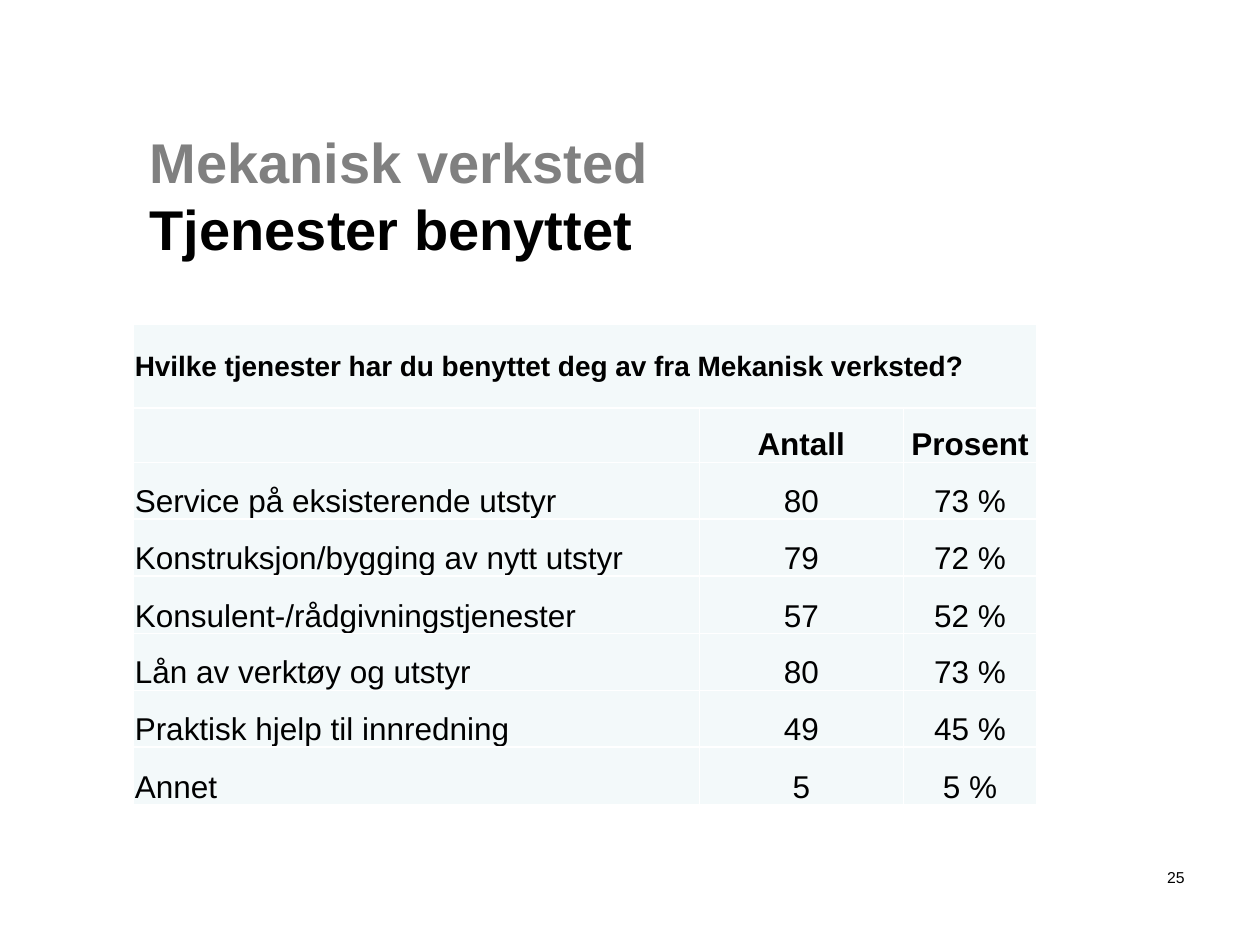
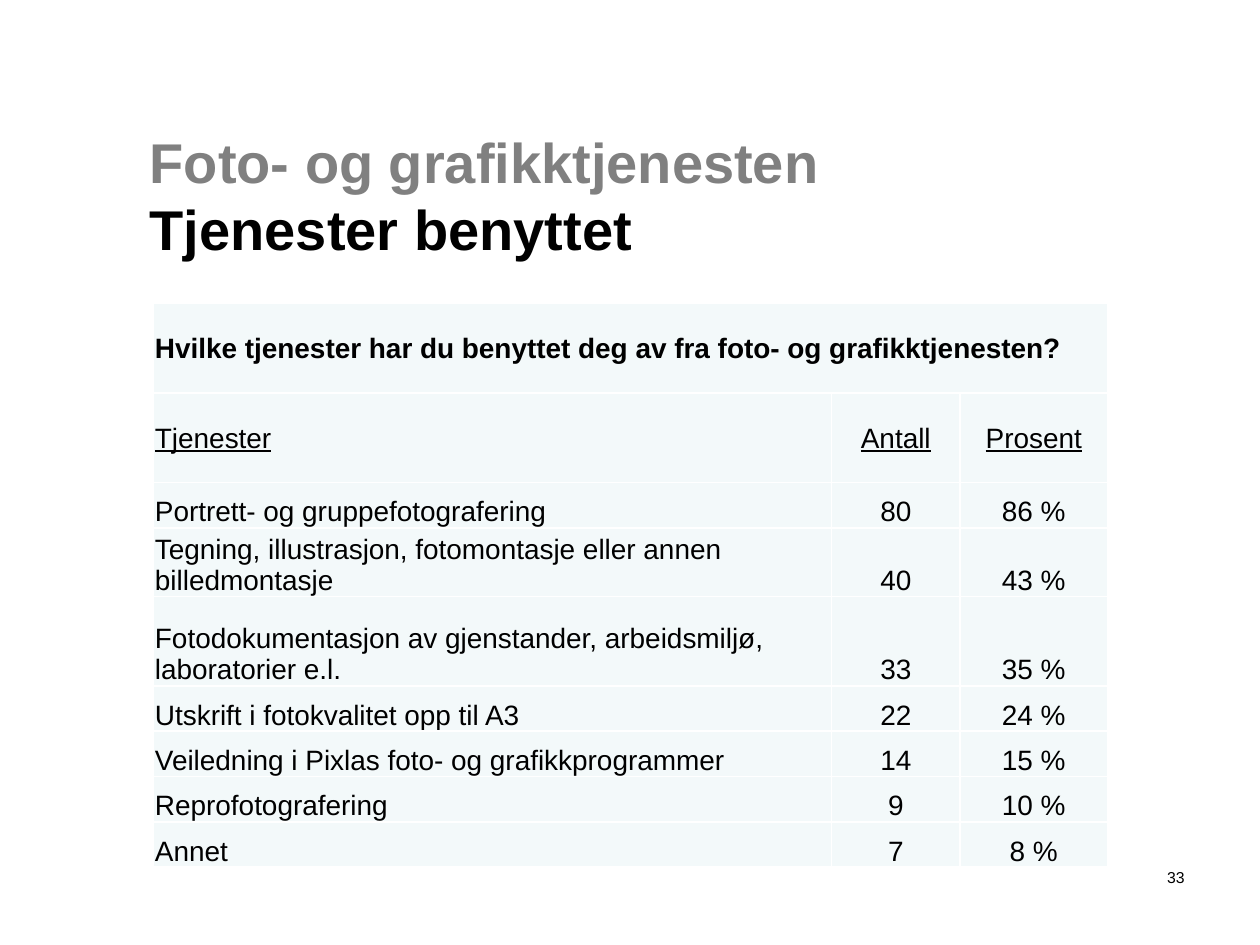
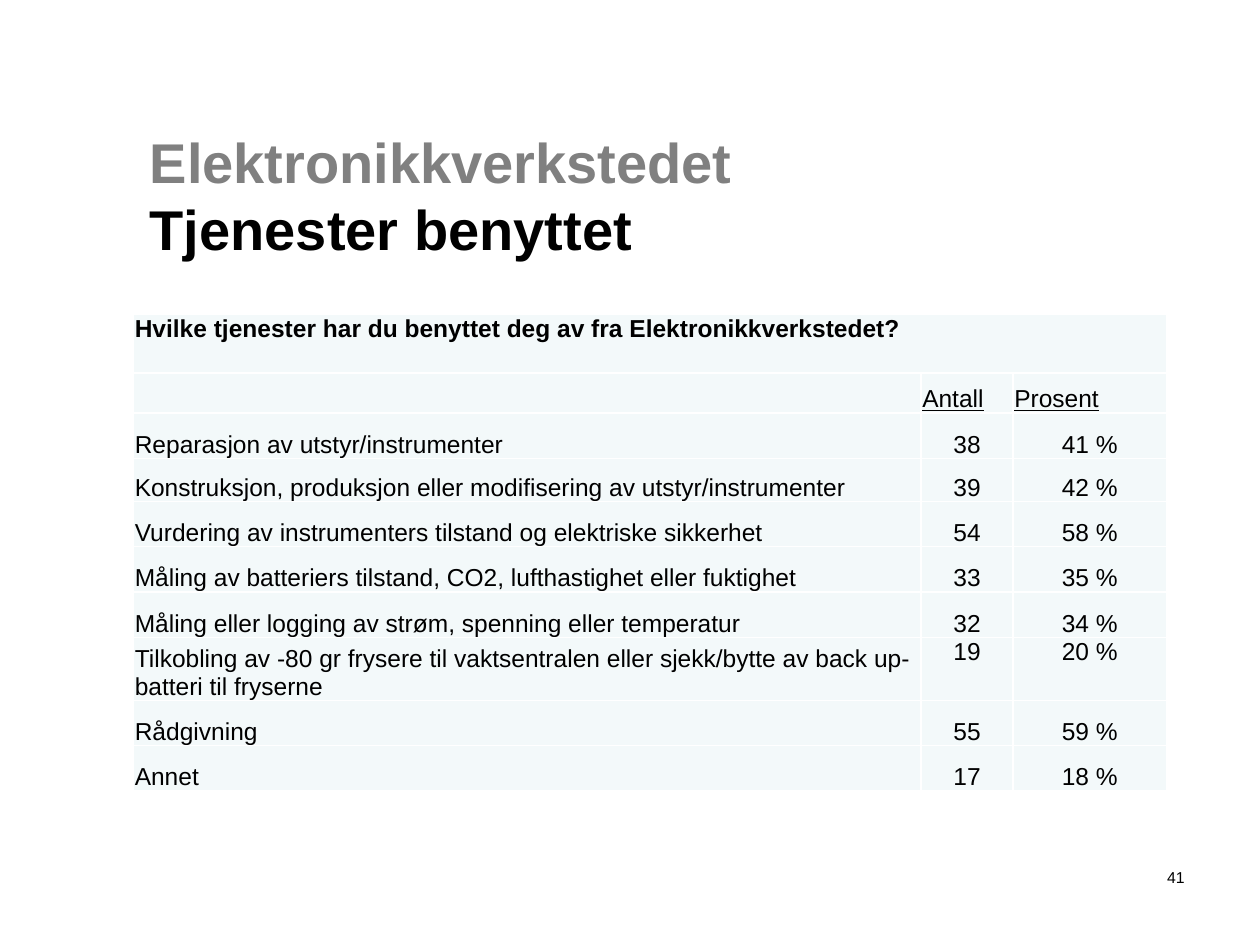
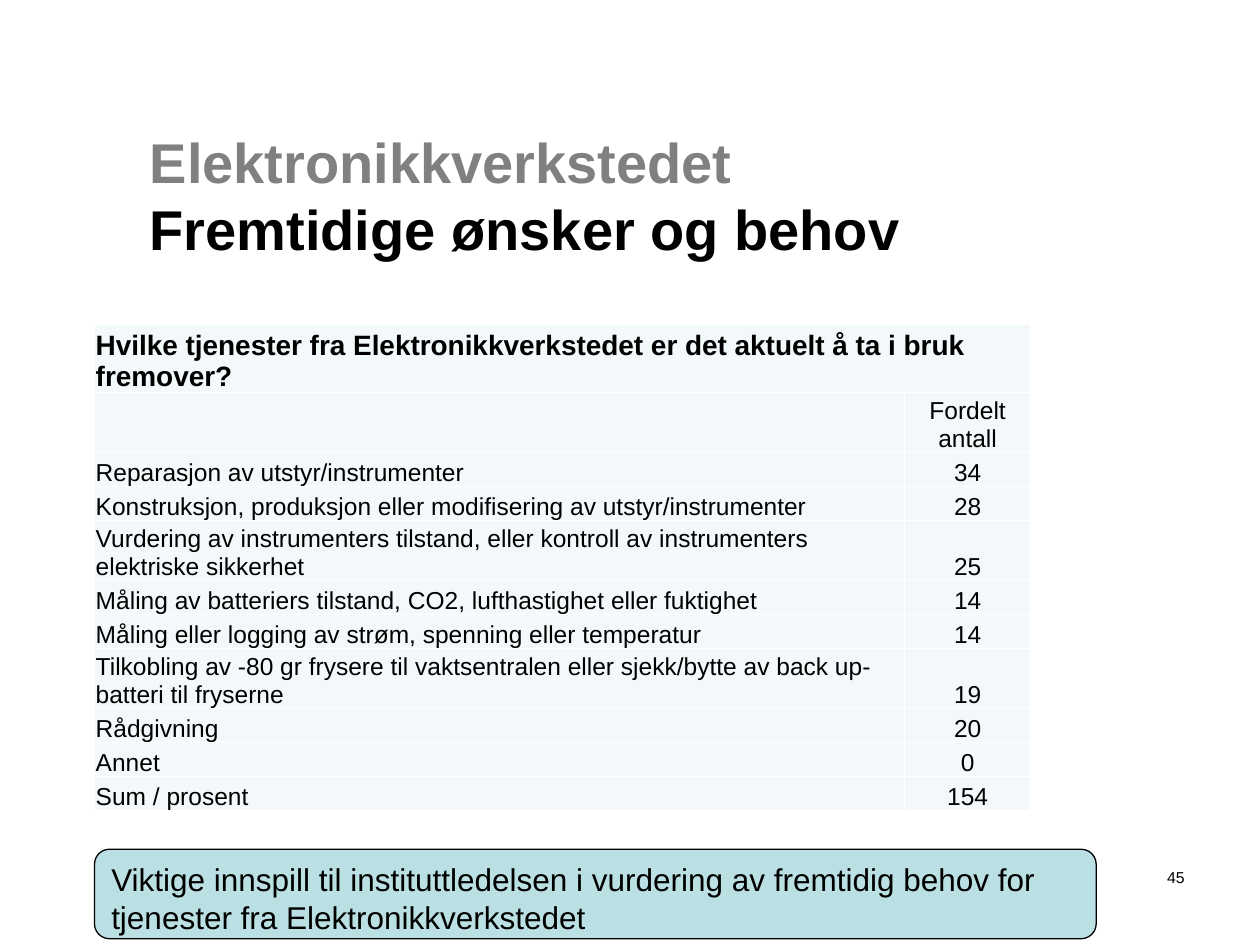
"""Builds four survey slides on the workshops and their services."""
from dataclasses import dataclass, replace
from typing import Any

from lxml import etree
from pptx import Presentation
from pptx.dml.color import RGBColor
from pptx.enum.shapes import MSO_SHAPE
from pptx.enum.text import MSO_ANCHOR, PP_ALIGN
from pptx.oxml.ns import qn
from pptx.util import Inches, Pt

LEFT, CENTER, RIGHT = PP_ALIGN.LEFT, PP_ALIGN.CENTER, PP_ALIGN.RIGHT
TOP, MIDDLE, BOTTOM = MSO_ANCHOR.TOP, MSO_ANCHOR.MIDDLE, MSO_ANCHOR.BOTTOM
ROUNDED = MSO_SHAPE.ROUNDED_RECTANGLE
BLANK_LAYOUT = 6


@dataclass(frozen=True)
class Theme:
    """Colours, font and type sizes of the deck."""
    font: str = "Arial"
    text: str = "000000"
    muted: str = "808080"
    cell: str = "F3F9FA"
    border: str = "FFFFFF"
    callout: str = "BBE0E3"
    title_size: int = 32
    callout_size: int = 18
    number_size: int = 9


THEME = Theme()


@dataclass(frozen=True)
class Box:
    """Place and size in inches."""
    left: float
    top: float
    width: float
    height: float


@dataclass(frozen=True)
class CellStyle:
    """Type and placement of the text in a cell."""
    size: int
    align: Any = CENTER
    anchor: Any = BOTTOM
    bold: bool = False
    underline: bool = False


@dataclass(frozen=True)
class SurveyTable:
    """Question, column headings and answers of a table."""
    left: float
    top: float
    columns: tuple[float, ...]
    heights: tuple[float, ...]
    question: str
    question_style: CellStyle
    headings: tuple[str, ...]
    heading_style: CellStyle
    answers: tuple[tuple[str, ...], ...]
    size: int
    top_values: str = ""


@dataclass(frozen=True)
class SurveySlide:
    """Content of one slide."""
    unit: str
    topic: str
    number: int
    table: SurveyTable
    callout: str = ""


TITLE_BOX = Box(1.09, 0.92, 8.42, 1.25)
NUMBER_BOX = Box(8.75, 6.84, 0.75, 0.5)
CALLOUT_BOX = Box(0.75, 6.74, 7.95, 0.71)
USED = "Tjenester benyttet"
REPAIR = "Reparasjon av utstyr/instrumenter"
BUILD = "Konstruksjon, produksjon eller modifisering av utstyr/instrumenter"
BATTERIES = "Måling av batteriers tilstand, CO2, lufthastighet eller fuktighet"
LOGGING = "Måling eller logging av strøm, spenning eller temperatur"
FREEZERS = ("Tilkobling av -80 gr frysere til vaktsentralen eller "
            "sjekk/bytte av back up-batteri til fryserne")

SLIDES = (
    SurveySlide("Mekanisk verksted", USED, 25, SurveyTable(
        1.06, 2.57, (4.49, 1.62, 1.06), (0.67, 0.43) + (0.45, 0.45, 0.46) * 2,
        "Hvilke tjenester har du benyttet deg av fra Mekanisk verksted?",
        CellStyle(16, LEFT, MIDDLE, bold=True),
        ("", "Antall", "Prosent"), CellStyle(18, bold=True),
        (("Service på eksisterende utstyr", "80", "73 %"),
         ("Konstruksjon/bygging av nytt utstyr", "79", "72 %"),
         ("Konsulent-/rådgivningstjenester", "57", "52 %"),
         ("Lån av verktøy og utstyr", "80", "73 %"),
         ("Praktisk hjelp til innredning", "49", "45 %"),
         ("Annet", "5", "5 %")), 18)),
    SurveySlide("Foto- og grafikktjenesten", USED, 33, SurveyTable(
        1.22, 2.41, (5.38, 1.02, 1.17),
        (0.71, 0.71, 0.36, 0.36, 0.71) + (0.36,) * 4,
        "Hvilke tjenester har du benyttet deg av fra foto- og grafikktjenesten?",
        CellStyle(16, LEFT, MIDDLE, bold=True),
        ("Tjenester", "Antall", "Prosent"), CellStyle(16, CENTER, MIDDLE, underline=True),
        (("Portrett- og gruppefotografering", "80", "86 %"),
         ("Tegning, illustrasjon, fotomontasje eller annen billedmontasje", "40", "43 %"),
         ("Fotodokumentasjon av gjenstander, arbeidsmiljø, laboratorier e.l.", "33", "35 %"),
         ("Utskrift i fotokvalitet opp til A3", "22", "24 %"),
         ("Veiledning i Pixlas foto- og grafikkprogrammer", "14", "15 %"),
         ("Reprofotografering", "9", "10 %"),
         ("Annet", "7", "8 %")), 16)),
    SurveySlide("Elektronikkverkstedet", USED, 41, SurveyTable(
        1.06, 2.49, (6.25, 0.73, 1.22),
        (0.47, 0.32, 0.36, 0.34, 0.36, 0.36, 0.36, 0.5, 0.36, 0.36),
        "Hvilke tjenester har du benyttet deg av fra Elektronikkverkstedet?",
        CellStyle(14, LEFT, TOP, bold=True),
        ("", "Antall", "Prosent"), CellStyle(14, LEFT, underline=True),
        ((REPAIR, "38", "41 %"),
         (BUILD, "39", "42 %"),
         ("Vurdering av instrumenters tilstand og elektriske sikkerhet", "54", "58 %"),
         (BATTERIES, "33", "35 %"),
         (LOGGING, "32", "34 %"),
         (FREEZERS, "19", "20 %"),
         ("Rådgivning", "55", "59 %"),
         ("Annet", "17", "18 %")), 14, top_values=FREEZERS)),
    SurveySlide("Elektronikkverkstedet", "Fremtidige ønsker og behov", 45, SurveyTable(
        0.75, 2.57, (6.43, 1), (0.27,) * 11,
        "Hvilke tjenester fra Elektronikkverkstedet er det aktuelt å ta i bruk fremover?",
        CellStyle(16, LEFT, bold=True),
        ("", "Fordelt antall"), CellStyle(14),
        ((REPAIR, "34"),
         (BUILD, "28"),
         ("Vurdering av instrumenters tilstand, eller kontroll av instrumenters "
          "elektriske sikkerhet", "25"),
         (BATTERIES, "14"),
         (LOGGING, "14"),
         (FREEZERS, "19"),
         ("Rådgivning", "20"),
         ("Annet", "0"),
         ("Sum / prosent", "154")), 14),
        "Viktige innspill til instituttledelsen i vurdering av fremtidig behov for "
        "tjenester fra Elektronikkverkstedet"),
)


def set_attributes(target: Any, values: dict[str, Any]) -> None:
    """Set every named attribute on the target."""
    for name, value in values.items():
        setattr(target, name, value)


def place(box: Box) -> tuple[int, ...]:
    """Return the box as slide lengths."""
    return tuple(Inches(length) for length in (box.left, box.top, box.width, box.height))


def add_run(paragraph: Any, text: str, size: int, color: str = THEME.text, **extra: Any) -> None:
    """Add a run in the deck font."""
    run = paragraph.add_run()
    run.text = text
    set_attributes(run.font, {"name": THEME.font, "size": Pt(size), **extra})
    run.font.color.rgb = RGBColor.from_string(color)


def add_text_box(slide: Any, box: Box, anchor: Any, align: Any) -> Any:
    """Add a wrapping text box and return its first paragraph."""
    frame = slide.shapes.add_textbox(*place(box)).text_frame
    set_attributes(frame, {"word_wrap": True, "vertical_anchor": anchor})
    paragraph = frame.paragraphs[0]
    paragraph.alignment = align
    return paragraph


def add_title(slide: Any, unit: str, topic: str) -> None:
    """Add the two-line title."""
    paragraph = add_text_box(slide, TITLE_BOX, MIDDLE, LEFT)
    add_run(paragraph, unit, THEME.title_size, THEME.muted, bold=True)
    paragraph.add_line_break()
    add_run(paragraph, topic, THEME.title_size, bold=True)


def add_number(slide: Any, number: int) -> None:
    """Add the slide number."""
    paragraph = add_text_box(slide, NUMBER_BOX, TOP, RIGHT)
    add_run(paragraph, str(number), THEME.number_size)


def add_callout(slide: Any, text: str) -> None:
    """Add the rounded conclusion box."""
    shape = slide.shapes.add_shape(ROUNDED, *place(CALLOUT_BOX))
    shape.shadow.inherit = False
    shape.fill.solid()
    shape.fill.fore_color.rgb = RGBColor.from_string(THEME.callout)
    shape.line.color.rgb = RGBColor.from_string(THEME.text)
    shape.line.width = Pt(0.75)
    set_attributes(shape.text_frame, {"word_wrap": True, "vertical_anchor": TOP})
    paragraph = shape.text_frame.paragraphs[0]
    paragraph.alignment = LEFT
    add_run(paragraph, text, THEME.callout_size)


def add_borders(cell: Any) -> None:
    """Draw a thin line on all four sides of a cell."""
    properties = cell._tc.get_or_add_tcPr()
    for side in ("a:lnL", "a:lnR", "a:lnT", "a:lnB"):
        line = etree.SubElement(properties, qn(side), w=str(Pt(1)))
        fill = etree.SubElement(line, qn("a:solidFill"))
        etree.SubElement(fill, qn("a:srgbClr"), val=THEME.border)


def fill_cell(cell: Any, text: str, style: CellStyle) -> None:
    """Format a cell and write its text."""
    add_borders(cell)
    cell.fill.solid()
    cell.fill.fore_color.rgb = RGBColor.from_string(THEME.cell)
    margin = Inches(0.01)
    set_attributes(cell, {"margin_left": margin, "margin_right": margin, "margin_top": margin,
                          "margin_bottom": 0, "vertical_anchor": style.anchor})
    if text:
        paragraph = cell.text_frame.paragraphs[0]
        paragraph.alignment = style.align
        add_run(paragraph, text, style.size, bold=style.bold, underline=style.underline)


def pick_style(survey: SurveyTable, row: int, column: int, label: str) -> CellStyle:
    """Choose the style for a cell by its place in the table."""
    if row == 0:
        return survey.question_style
    base = survey.heading_style if row == 1 else CellStyle(survey.size)
    if column == 0:
        return replace(base, align=LEFT)
    if label and label == survey.top_values:
        return replace(base, anchor=TOP)
    return base


def add_survey_table(slide: Any, survey: SurveyTable) -> None:
    """Add the table with question, headings and answers."""
    question_row = (survey.question,) + ("",) * (len(survey.columns) - 1)
    rows = (question_row, survey.headings) + survey.answers
    box = Box(survey.left, survey.top, sum(survey.columns), sum(survey.heights))
    table = slide.shapes.add_table(len(rows), len(survey.columns), *place(box)).table
    set_attributes(table, {"first_row": False, "horz_banding": False})
    for column, width in zip(table.columns, survey.columns):
        column.width = Inches(width)
    for row, height in zip(table.rows, survey.heights):
        row.height = Inches(height)
    for row_index, texts in enumerate(rows):
        for column_index, text in enumerate(texts):
            style = pick_style(survey, row_index, column_index, texts[0])
            fill_cell(table.cell(row_index, column_index), text, style)
    table.cell(0, 0).merge(table.cell(0, len(survey.columns) - 1))


def main() -> None:
    """Build and save the deck."""
    presentation = Presentation()
    set_attributes(presentation, {"slide_width": Inches(10), "slide_height": Inches(7.5)})
    for content in SLIDES:
        slide = presentation.slides.add_slide(presentation.slide_layouts[BLANK_LAYOUT])
        add_title(slide, content.unit, content.topic)
        add_number(slide, content.number)
        add_survey_table(slide, content.table)
        if content.callout:
            add_callout(slide, content.callout)
    presentation.save("out.pptx")


if __name__ == "__main__":
    main()
